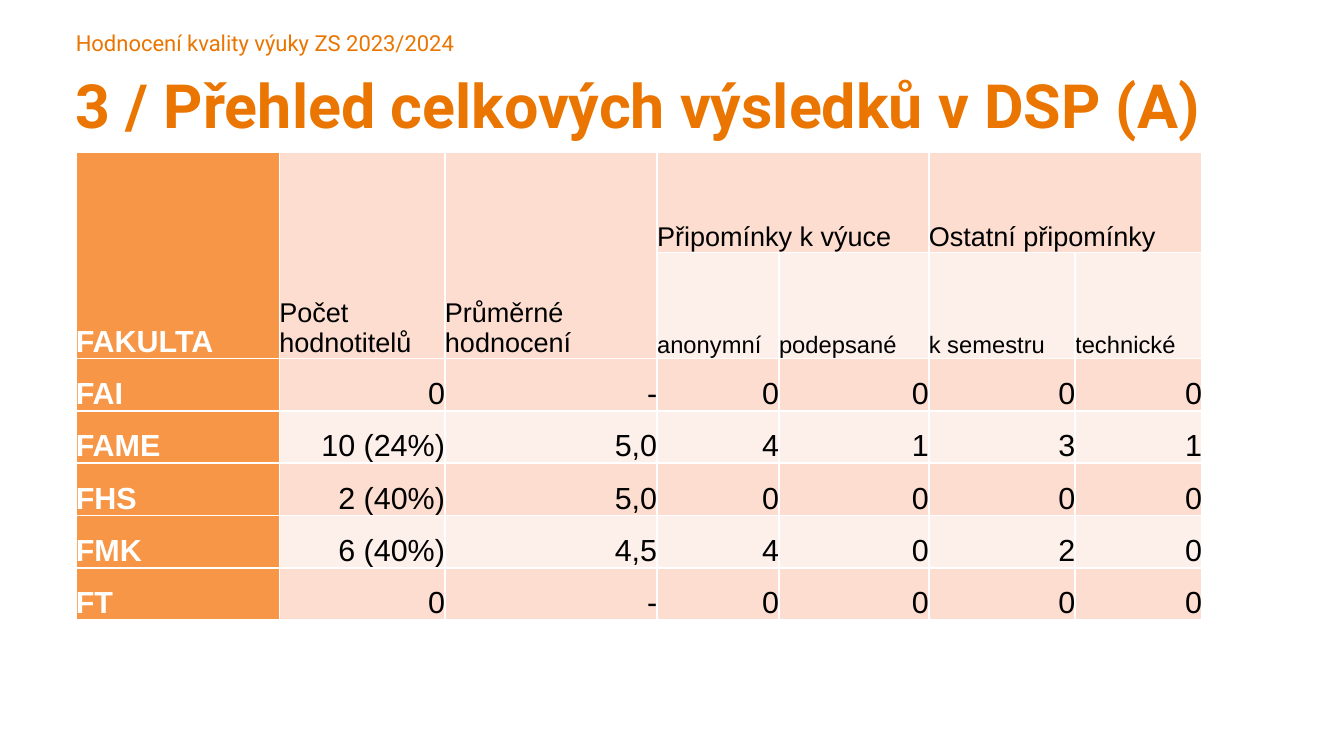
from pptx import Presentation
from pptx.dml.color import RGBColor
from pptx.enum.text import MSO_ANCHOR as ANCHOR, PP_ALIGN as ALIGN
from pptx.oxml import parse_xml
from pptx.oxml.ns import nsdecls
from pptx.util import Cm, Pt

TITLE = RGBColor(0xEA, 0x75, 0x00)
ORANGE = RGBColor(0xF7, 0x96, 0x46)
DARK_BAND = RGBColor(0xFC, 0xDD, 0xCF)
LIGHT_BAND = RGBColor(0xFD, 0xEF, 0xE9)
WHITE = RGBColor(0xFF, 0xFF, 0xFF)
BLACK = RGBColor(0, 0, 0)

LEFT = Cm(1.58)
COL_WIDTHS = [4.24, 3.45, 4.42, 2.54, 3.12, 3.05, 2.64]
ROW_HEIGHTS = [2.08, 2.21] + [1.09] * 5
ROWS = [
    ["FAKULTA", "Počet hodnotitelů", "Průměrné hodnocení",
     "Připomínky k výuce", "", "Ostatní připomínky", ""],
    ["", "", "", "anonymní", "podepsané", "k semestru", "technické"],
    ["FAI", "0", "-", "0", "0", "0", "0"],
    ["FAME", "10 (24%)", "5,0", "4", "1", "3", "1"],
    ["FHS", "2 (40%)", "5,0", "0", "0", "0", "0"],
    ["FMK", "6 (40%)", "4,5", "4", "0", "2", "0"],
    ["FT", "0", "-", "0", "0", "0", "0"],
]
MERGES = [((0, c), (1, c)) for c in range(3)] + [((0, c), (0, c + 1)) for c in (3, 5)]


def write(tf, text, size=18, color=BLACK, bold=False, font="Arial", align=ALIGN.LEFT):
    """Write one formatted paragraph into a text frame."""
    tf.word_wrap = True
    p = tf.paragraphs[0]
    p.alignment = align
    r = p.add_run()
    r.text = text
    r.font.name = font
    r.font.size = Pt(size)
    r.font.bold = bold
    r.font.color.rgb = color


def add_heading(s, text, top, height, **fmt):
    """Add a text box without margins in the title style."""
    tf = s.shapes.add_textbox(LEFT, Cm(top), Cm(25.2), Cm(height)).text_frame
    tf.margin_left = tf.margin_right = tf.margin_top = tf.margin_bottom = 0
    write(tf, text, font="Roboto", color=TITLE, **fmt)


def add_borders(cell):
    """Draw thin white lines on all four sides of a cell."""
    tc_pr = cell._tc.get_or_add_tcPr()
    for side in "LRTB":
        tc_pr.append(parse_xml(
            f'<a:ln{side} {nsdecls("a")} w="{Pt(1)}"><a:solidFill>'
            f'<a:srgbClr val="{WHITE}"/></a:solidFill></a:ln{side}>'))


def format_cell(cell, text, row, col):
    """Style a cell by its row and column and write its text."""
    cell.margin_left = cell.margin_right = cell.margin_top = cell.margin_bottom = 0
    cell.vertical_anchor = ANCHOR.BOTTOM
    add_borders(cell)
    cell.fill.solid()
    band = LIGHT_BAND if row % 2 else DARK_BAND
    cell.fill.fore_color.rgb = ORANGE if col == 0 else band
    if not text:
        return
    if col == 0:
        write(cell.text_frame, text, color=WHITE, bold=True)
    elif row < 2:
        write(cell.text_frame, text, size=(16, 14)[row])
    else:
        write(cell.text_frame, text, align=ALIGN.RIGHT)


def add_results(s):
    """Add the table of results by faculty."""
    table = s.shapes.add_table(
        len(ROWS), len(COL_WIDTHS), LEFT, Cm(3.18),
        Cm(sum(COL_WIDTHS)), Cm(sum(ROW_HEIGHTS))).table
    for column, width in zip(table.columns, COL_WIDTHS):
        column.width = Cm(width)
    for table_row, height in zip(table.rows, ROW_HEIGHTS):
        table_row.height = Cm(height)
    for start, end in MERGES:
        table.cell(*start).merge(table.cell(*end))
    for row, texts in enumerate(ROWS):
        for col, text in enumerate(texts):
            format_cell(table.cell(row, col), text, row, col)


def main():
    """Build the slide and save it."""
    prs = Presentation()
    prs.slide_width, prs.slide_height = Cm(28), Cm(15.75)
    s = prs.slides.add_slide(prs.slide_layouts[6])
    add_heading(s, "Hodnocení kvality výuky ZS 2023/2024", 0.61, 0.56, size=13)
    add_heading(s, "3 / Přehled celkových výsledků v DSP (A)", 1.4, 1.55, size=36, bold=True)
    add_results(s)
    prs.save("out.pptx")


if __name__ == "__main__":
    main()
